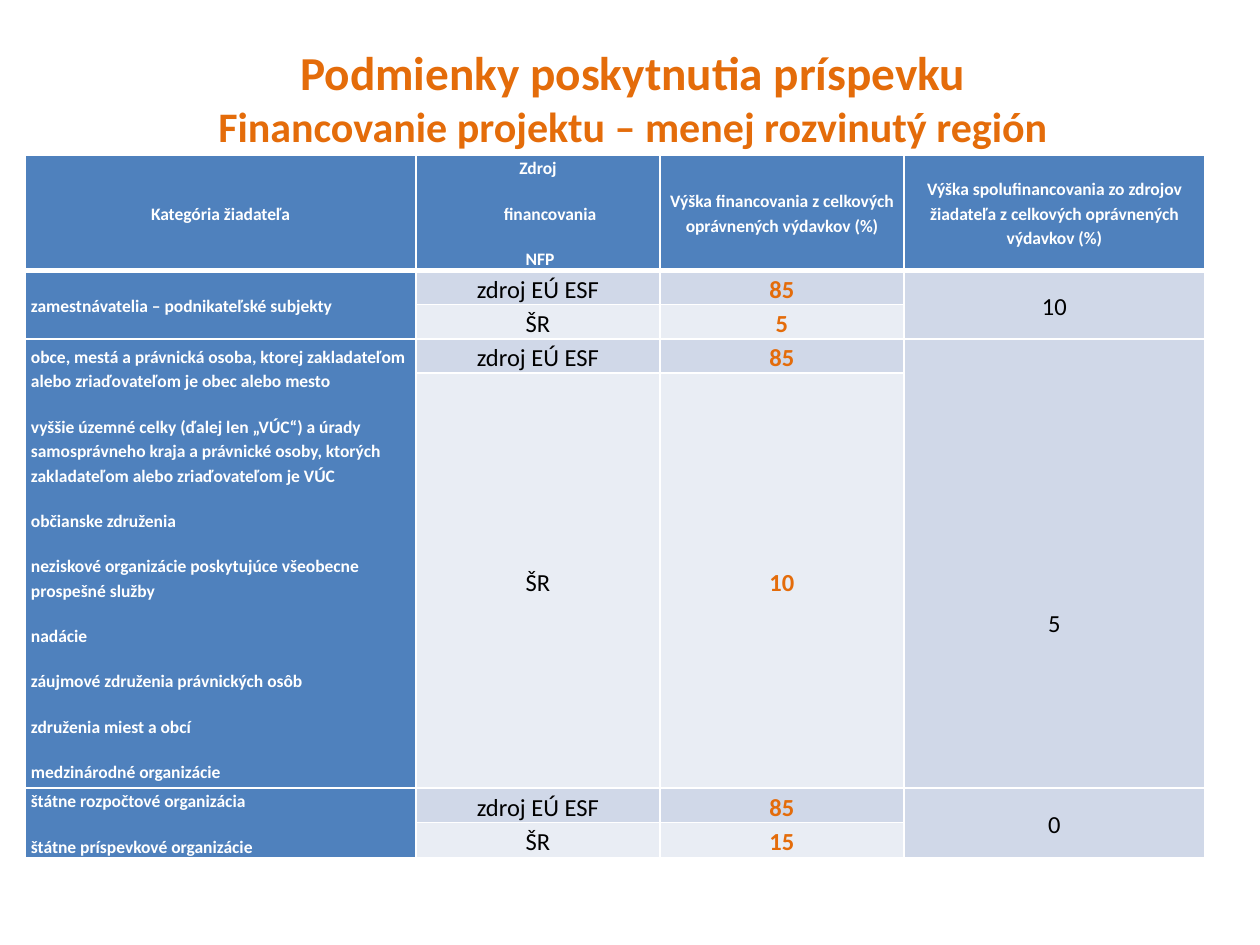
from lxml import etree
from pptx import Presentation
from pptx.dml.color import RGBColor
from pptx.enum.text import MSO_ANCHOR, MSO_AUTO_SIZE, PP_ALIGN
from pptx.oxml.ns import qn
from pptx.util import Pt

PX = 914400 // 126
LEFT, CENTER = PP_ALIGN.LEFT, PP_ALIGN.CENTER
MIDDLE, TOP = MSO_ANCHOR.MIDDLE, MSO_ANCHOR.TOP
NO_AUTOFIT = MSO_AUTO_SIZE.NONE

ORANGE, WHITE, BLACK = "E46C0A", "FFFFFF", "000000"
BLUE, BAND_DARK, BAND_LIGHT = "4F81BD", "D0D8E8", "E9EDF4"


def color(hex_value):
    return RGBColor.from_string(hex_value)


class SlideBuilder:
    font = "Calibri"
    line_spacing = 1.15
    paragraph_gap = 12
    cell_inset = 6

    def __init__(self, slide):
        self.slide = slide

    def add_run(self, paragraph, text, size, ink, bold):
        run = paragraph.add_run()
        run.text = text
        run.font.name = self.font
        run.font.size = Pt(size)
        run.font.bold = bold
        run.font.color.rgb = color(ink)

    def heading(self, left, top, width, height, lines):
        """Fill the body placeholder with centred, unbulleted lines."""
        title, body = self.slide.placeholders
        title.element.getparent().remove(title.element)
        body.left, body.top = left * PX, top * PX
        body.width, body.height = width * PX, height * PX
        frame = body.text_frame
        frame.word_wrap = True
        frame.auto_size = NO_AUTOFIT
        frame.vertical_anchor = TOP
        for index, (text, size) in enumerate(lines):
            paragraph = frame.paragraphs[0] if index == 0 else frame.add_paragraph()
            properties = paragraph._p.get_or_add_pPr()
            properties.set("marL", "0")
            properties.set("indent", "0")
            etree.SubElement(properties, qn("a:buNone"))
            paragraph.alignment = CENTER
            paragraph.space_before = Pt(0)
            self.add_run(paragraph, text, size, ORANGE, True)

    def table(self, left, top, columns, rows):
        frame = self.slide.shapes.add_table(
            len(rows), len(columns), left * PX, top * PX,
            sum(columns) * PX, sum(rows) * PX)
        grid = frame.table
        grid.first_row = grid.horz_banding = False
        for column, width in zip(grid.columns, columns):
            column.width = width * PX
        for row, height in zip(grid.rows, rows):
            row.height = height * PX
        return grid

    def style_cell(self, cell, fill, top_line=1, bottom_line=1):
        cell.fill.solid()
        cell.fill.fore_color.rgb = color(fill)
        cell.vertical_anchor = MIDDLE
        cell.margin_left = cell.margin_right = self.cell_inset * PX
        cell.margin_top = cell.margin_bottom = 0
        properties = cell._tc.get_or_add_tcPr()
        borders = [("a:lnL", 1), ("a:lnR", 1), ("a:lnT", top_line), ("a:lnB", bottom_line)]
        for position, (tag, width) in enumerate(borders):
            line = etree.Element(qn(tag), w=str(Pt(width)))
            solid = etree.SubElement(line, qn("a:solidFill"))
            etree.SubElement(solid, qn("a:srgbClr"), val=WHITE)
            properties.insert(position, line)

    def cell_text(self, cell, texts, size, ink, bold, align=CENTER, indents=None):
        frame = cell.text_frame
        for index, text in enumerate(texts):
            paragraph = frame.paragraphs[0] if index == 0 else frame.add_paragraph()
            paragraph.alignment = align
            paragraph.line_spacing = self.line_spacing
            if index:
                paragraph.space_before = Pt(self.paragraph_gap)
            if indents and indents[index]:
                paragraph._p.get_or_add_pPr().set("marL", str(indents[index] * PX))
            self.add_run(paragraph, text, size, ink, bold)


# Header texts, each with optional paragraph indents
HEADERS = [
    (["Kategória žiadateľa"], None),
    (["Zdroj", "financovania", "NFP"], [0, 24, 4]),
    (["Výška financovania z\u00a0celkových oprávnených výdavkov (%)"], None),
    (["Výška spolufinancovania zo zdrojov žiadateľa z\u00a0celkových "
      "oprávnených výdavkov (%)"], None),
]

# Applicants, EU share, state share, own share, top margin of own share
GROUPS = [
    (["zamestnávatelia – podnikateľské subjekty"], "85", "5", "10", 0),
    (["obce, mestá a právnická osoba, ktorej zakladateľom alebo zriaďovateľom "
      "je obec alebo mesto",
      "vyššie územné celky (ďalej len „VÚC“) a úrady samosprávneho kraja "
      "a\u00a0právnické osoby, ktorých zakladateľom alebo zriaďovateľom je VÚC",
      "občianske združenia",
      "neziskové organizácie poskytujúce všeobecne prospešné služby",
      "nadácie",
      "záujmové združenia právnických osôb",
      "združenia miest a\u00a0obcí",
      "medzinárodné organizácie"], "85", "10", "5", 116),
    (["štátne rozpočtové organizácia", "štátne príspevkové organizácie"],
     "85", "15", "0", 0),
]


def main():
    presentation = Presentation()
    presentation.slide_width, presentation.slide_height = 1260 * PX, 945 * PX
    slide = presentation.slides.add_slide(presentation.slide_layouts[1])
    builder = SlideBuilder(slide)

    # Heading
    builder.heading(44, 37, 1178, 863, [
        ("Podmienky poskytnutia príspevku", 27),
        ("Financovanie projektu – menej rozvinutý región", 24),
    ])

    # Table header
    grid = builder.table(25, 155, [391, 244, 244, 301],
                         [115, 34, 34, 34, 415, 34, 34])
    for column, (texts, indents) in enumerate(HEADERS):
        cell = grid.cell(0, column)
        builder.style_cell(cell, BLUE, bottom_line=3)
        builder.cell_text(cell, texts, 10, WHITE, True, indents=indents)

    # Two rows per group of applicants
    for group, (applicants, eu_share, state_share, own_share, drop) in enumerate(GROUPS):
        first = 1 + 2 * group
        sources = [("zdroj EÚ ESF", eu_share, BAND_DARK), ("ŠR", state_share, BAND_LIGHT)]
        for row, (source, share, band) in enumerate(sources, first):
            for column, fill in enumerate([BLUE, band, band, BAND_DARK]):
                builder.style_cell(grid.cell(row, column), fill,
                                   top_line=3 if row == 1 else 1)
            builder.cell_text(grid.cell(row, 1), [source], 14, BLACK, False)
            builder.cell_text(grid.cell(row, 2), [share], 14, ORANGE, True)
        for column in (0, 3):
            grid.cell(first, column).merge(grid.cell(first + 1, column))
        builder.cell_text(grid.cell(first, 0), applicants, 10, WHITE, True, LEFT)
        own_cell = grid.cell(first, 3)
        own_cell.margin_top = drop * PX
        builder.cell_text(own_cell, [own_share], 14, BLACK, False)

    presentation.save("out.pptx")


if __name__ == "__main__":
    main()
